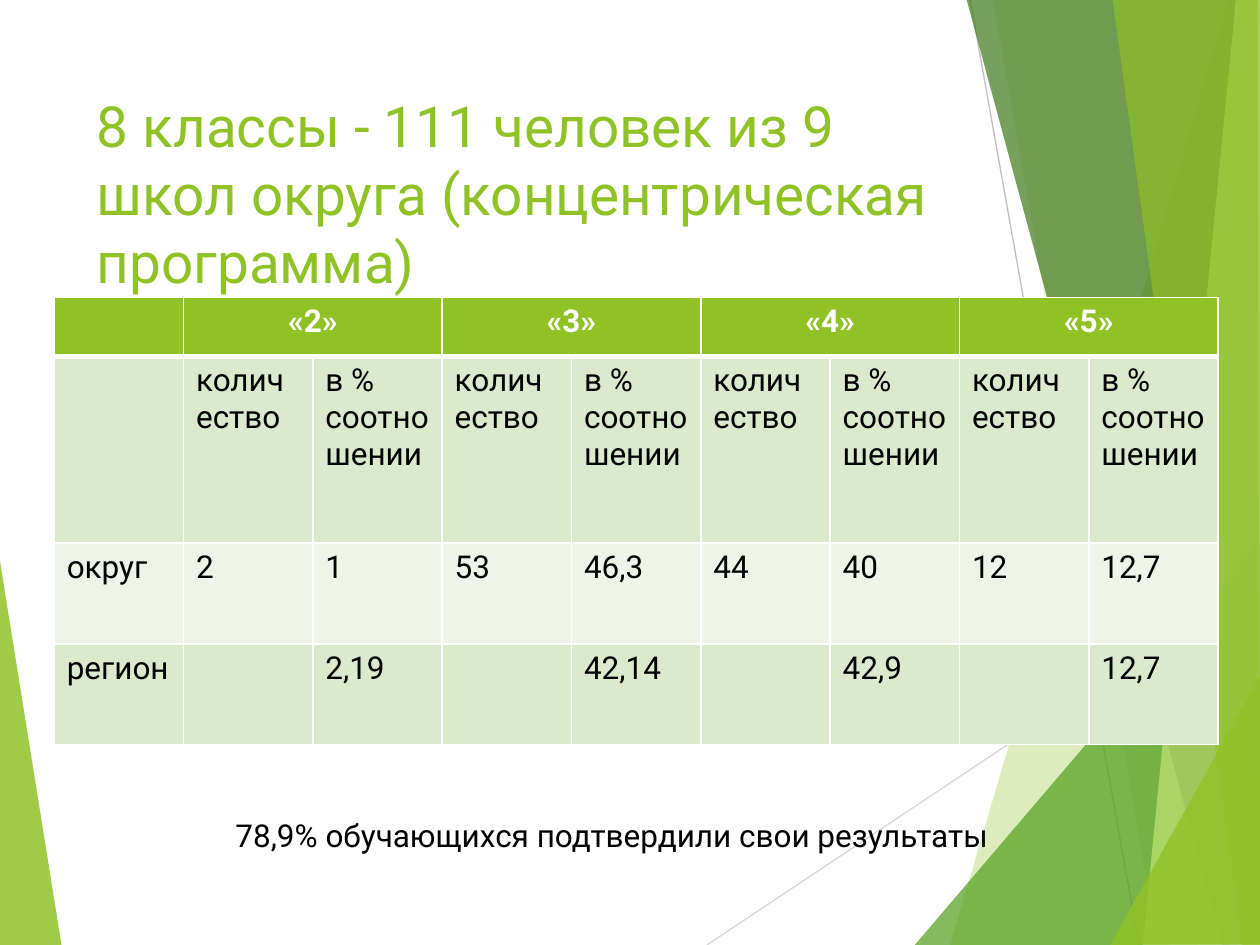
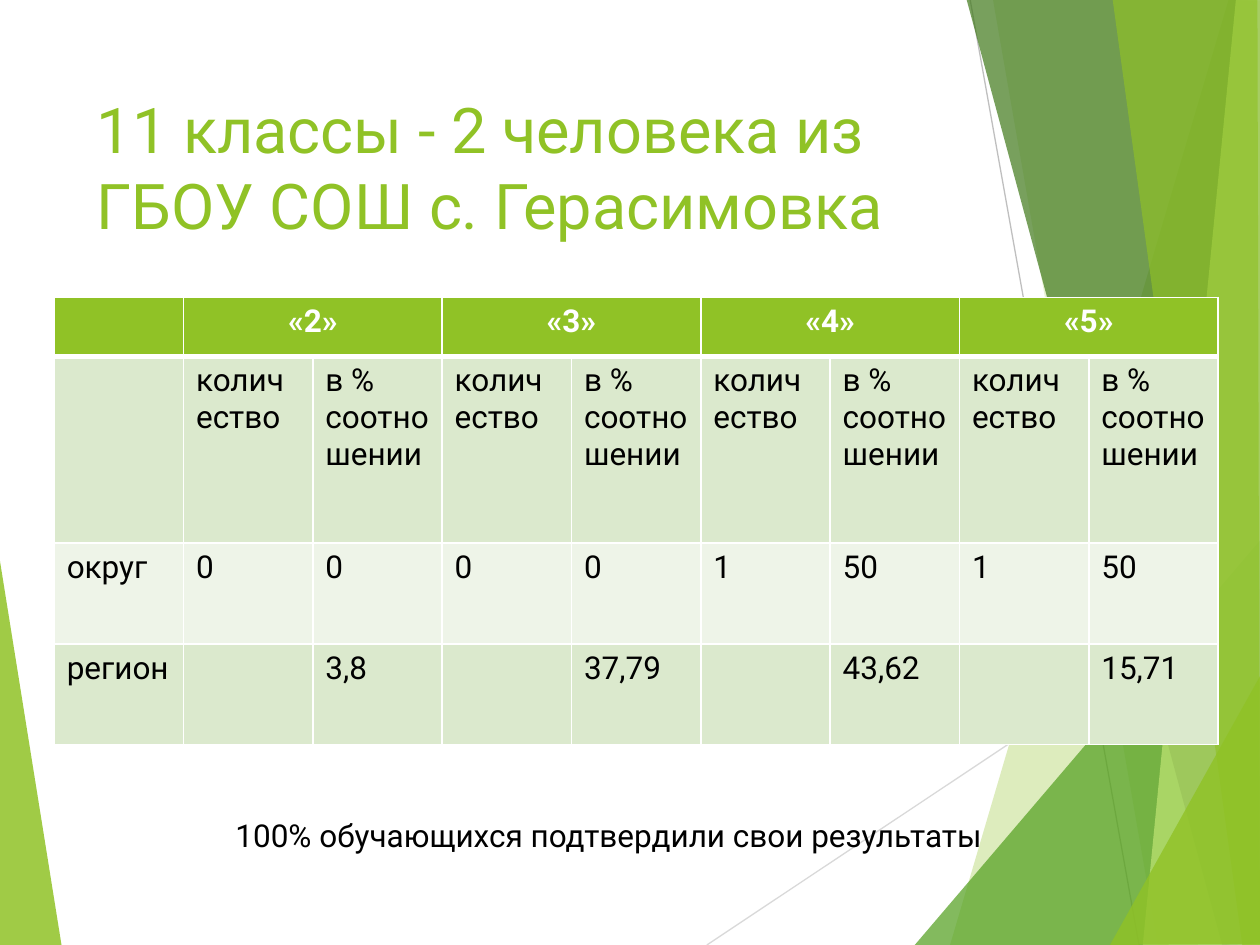
import pptx
import pptx.dml.color
import pptx.enum.shapes
import pptx.enum.text
import pptx.oxml
import pptx.oxml.ns
import pptx.util
import lxml.etree

PX = 9144  # EMU per px, 100 px to the inch
FONT = "Roboto"
GREEN, WHITE, BLACK = "90C226", "FFFFFF", "000000"
BAND_DARK, BAND_LIGHT = "DBE9CD", "EEF4E8"
qn = pptx.oxml.ns.qn

# Each facet: colour, opacity in percent, corner points
LEFT_FACET = (GREEN, 85, [(-1, 439), (49, 751), (-1, 750)])
RIGHT_FACETS = [
    (GREEN, 30, [(975, 0), (754, 750), (1002, 751), (1001, 1)]),
    (GREEN, 20, [(788, -1), (919, 750), (1001, 750), (1001, -1)]),
    ("54A021", 72, [(726, 750), (1000, 429), (1001, 750)]),
    ("3F7819", 70, [(767, -1), (970, 750), (1001, 749), (1001, -1)]),
    ("C0E474", 70, [(981, -1), (907, 750), (1001, 750), (1000, -1)]),
    (GREEN, 65, [(883, -1), (986, 750), (1000, 750), (998, -1)]),
    (GREEN, 80, [(881, 750), (1001, 535), (1001, 749)]),
]
RAYS = [("D9D9D9", 561, 750, 1001, 457), ("BFBFBF", 770, 0, 904, 750)]

MARKS = ["«2»", "«3»", "«4»", "«5»"]
SUBHEADS = ["количество", "в % соотношении"] * len(MARKS)
ROW_HEIGHTS = [47, 148, 80, 80]
ROW_FILLS = [GREEN, BAND_DARK, BAND_LIGHT, BAND_DARK]

SLIDES = [
    {
        "title": "8 классы - 111 человек из 9 школ округа (концентрическая программа)",
        "title_size": 32.4,
        "district": ["2", "1", "53", "46,3", "44", "40", "12", "12,7"],
        "region": ["", "2,19", "", "42,14", "", "42,9", "", "12,7"],
        "summary": "78,9% обучающихся подтвердили свои результаты",
    },
    {
        "title": "11 классы - 2 человека из ГБОУ СОШ с. Герасимовка",
        "title_size": 36,
        "district": ["0", "0", "0", "0", "1", "50", "1", "50"],
        "region": ["", "3,8", "", "37,79", "", "43,62", "", "15,71"],
        "summary": "100% обучающихся подтвердили свои результаты",
    },
]


def rgb(color):
    return pptx.dml.color.RGBColor.from_string(color)


def write(tf, text, size, color, bold=False):
    """Add one run to the first paragraph and return that paragraph."""
    tf.word_wrap = True
    p = tf.paragraphs[0]
    r = p.add_run()
    r.text = text
    r.font.name = FONT
    r.font.size = pptx.util.Pt(size)
    r.font.bold = bold
    r.font.color.rgb = rgb(color)
    return p


prs = pptx.Presentation()
prs.slide_width, prs.slide_height = 1000 * PX, 750 * PX

for data in SLIDES:
    s = prs.slides.add_slide(prs.slide_layouts[6])

    # Background: left facet, thin rays, right facets
    for color, opacity, points in [LEFT_FACET] + RIGHT_FACETS:
        builder = s.shapes.build_freeform(*points[0], scale=PX)
        builder.add_line_segments(points[1:], close=True)
        sp = builder.convert_to_shape()
        sp.shadow.inherit = False
        sp.fill.solid()
        sp.fill.fore_color.rgb = rgb(color)
        clr = sp.element.find(".//" + qn("a:srgbClr"))
        lxml.etree.SubElement(clr, qn("a:alpha"), val=str(opacity * 1000))
        sp.line.fill.background()

        if points is LEFT_FACET[2]:
            for ray_color, *ends in RAYS:
                ray = s.shapes.add_connector(
                    pptx.enum.shapes.MSO_CONNECTOR.STRAIGHT, *[v * PX for v in ends])
                ray.line.color.rgb = rgb(ray_color)
                ray.line.width = pptx.util.Pt(0.75)
                lxml.etree.SubElement(ray.element.spPr, qn("a:effectLst"))

    # Title
    title = s.shapes.add_textbox(67 * PX, 67 * PX, 694 * PX, 144 * PX)
    write(title.text_frame, data["title"], data["title_size"], GREEN)

    # Table of marks
    rows = [
        [""] + [text for mark in MARKS for text in (mark, "")],
        [""] + SUBHEADS,
        ["округ"] + data["district"],
        ["регион"] + data["region"],
    ]
    n_cols = len(rows[0])
    table = s.shapes.add_table(len(rows), n_cols, 43 * PX, 236 * PX,
                               924 * PX, sum(ROW_HEIGHTS) * PX).table
    for column in table.columns:
        column.width = 924 * PX // n_cols
    for i, row in enumerate(rows):
        table.rows[i].height = ROW_HEIGHTS[i] * PX
        for j, text in enumerate(row):
            cell = table.cell(i, j)
            tcPr = cell._tc.get_or_add_tcPr()
            for side in "LRTB":
                heavy = (i, side) in [(0, "B"), (1, "T")]
                ln = lxml.etree.SubElement(tcPr, qn("a:ln" + side),
                                           w=str(pptx.util.Pt(3 if heavy else 1)))
                line_fill = lxml.etree.SubElement(ln, qn("a:solidFill"))
                lxml.etree.SubElement(line_fill, qn("a:srgbClr"), val=WHITE)
            cell.fill.solid()
            cell.fill.fore_color.rgb = rgb(ROW_FILLS[i])
            if text:
                header = i == 0
                p = write(cell.text_frame, text, 18, WHITE if header else BLACK, header)
                if header:
                    p.alignment = pptx.enum.text.PP_ALIGN.CENTER
    for j in range(1, n_cols, 2):
        table.cell(0, j).merge(table.cell(0, j + 1))

    # Summary below the table
    summary = s.shapes.add_textbox(177 * PX, 643 * PX, 697 * PX, 62 * PX)
    write(summary.text_frame, data["summary"], 18, BLACK)

prs.save("out.pptx")
